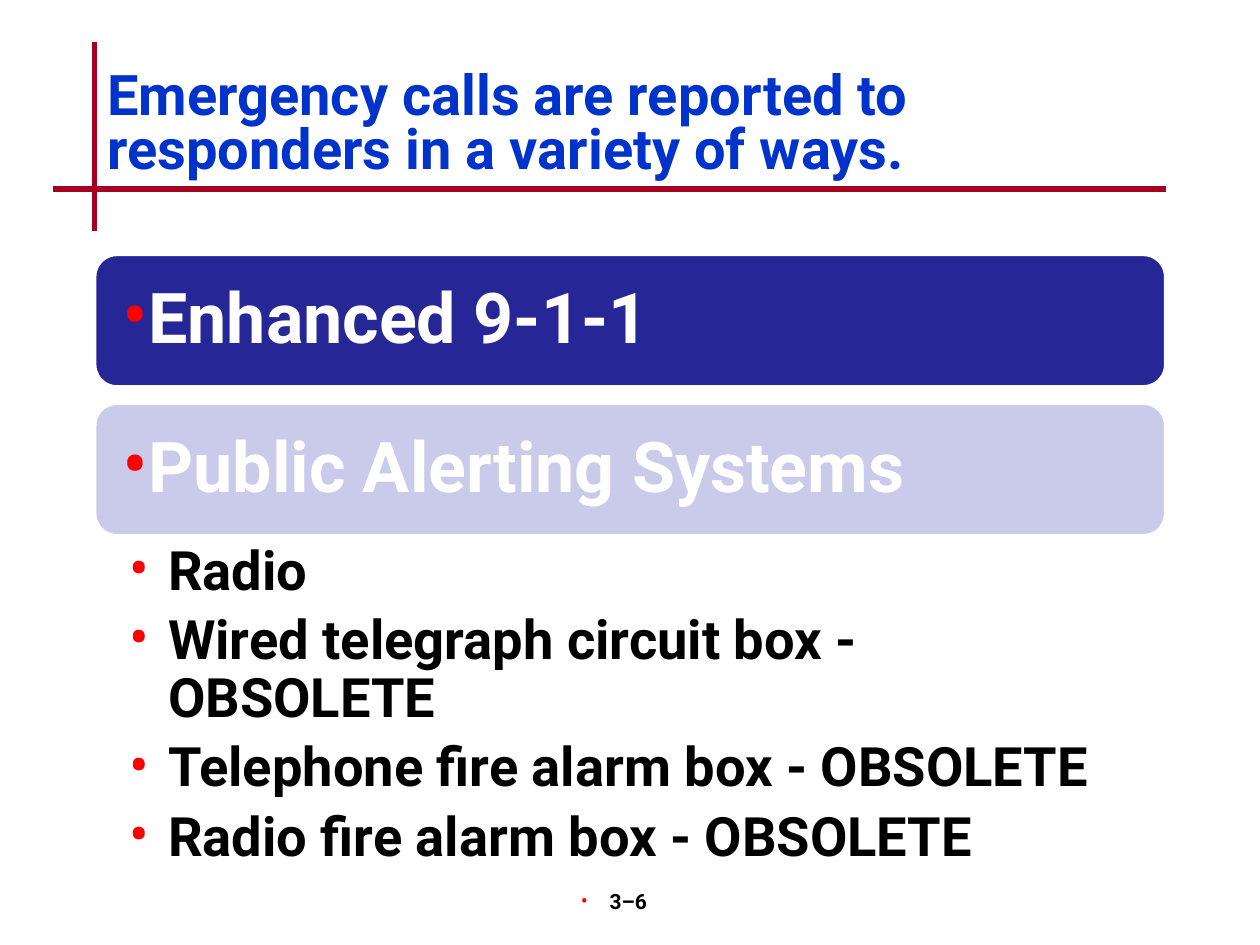
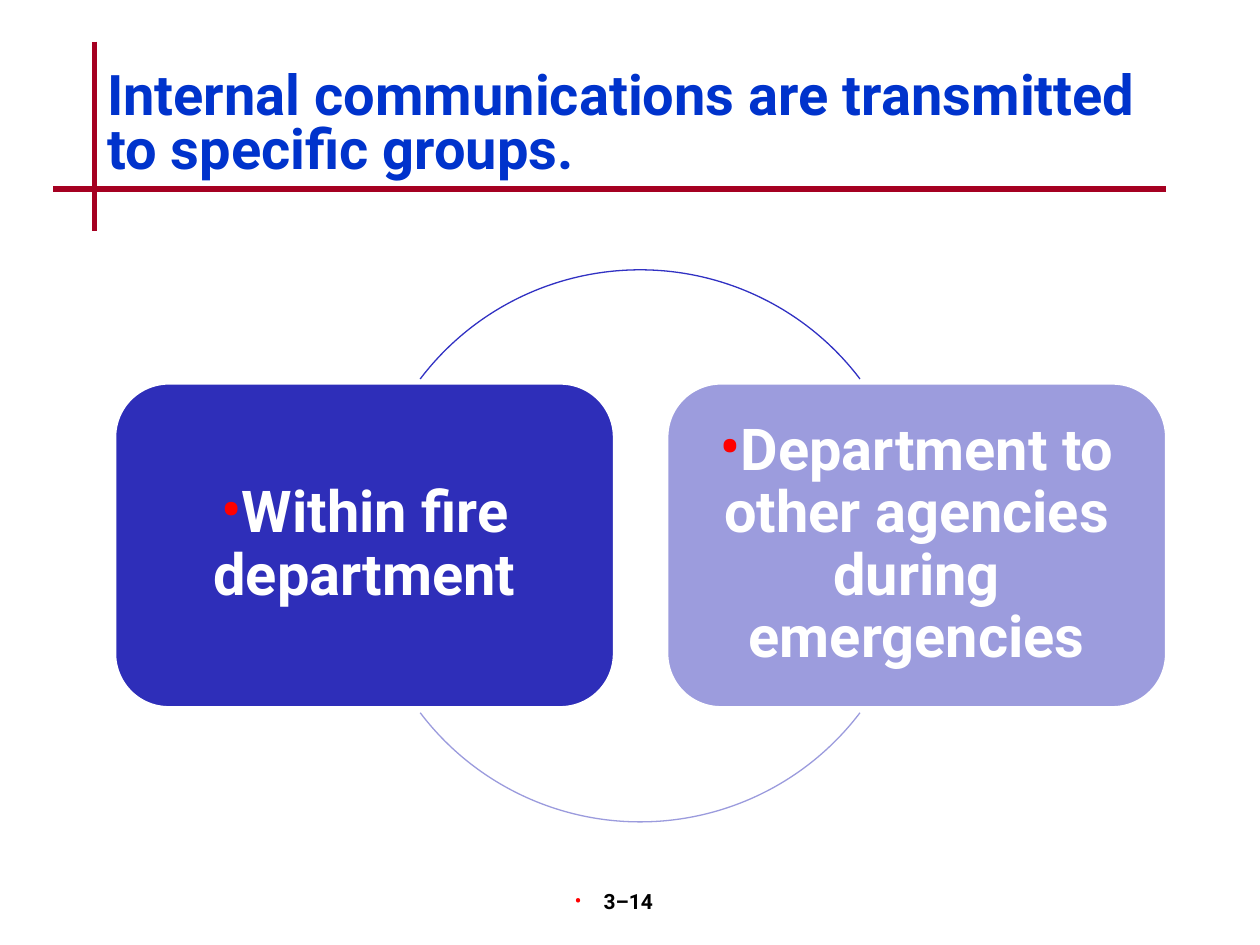
from dataclasses import dataclass
from typing import Any

from lxml.etree import SubElement
from pptx import Presentation
from pptx.dml.color import RGBColor
from pptx.enum.shapes import MSO_CONNECTOR, MSO_SHAPE
from pptx.enum.text import MSO_ANCHOR, MSO_AUTO_SIZE, PP_ALIGN
from pptx.oxml.ns import qn
from pptx.util import Cm, Pt


@dataclass(frozen=True)
class Theme:
    font: str = "Roboto"
    title: str = "0033CC"
    rule: str = "A50021"
    bullet: str = "FF0000"
    white: str = "FFFFFF"
    black: str = "000000"
    title_size: int = 32
    topic_size: int = 40
    method_size: int = 31
    group_size: int = 33
    page_size: int = 12


THEME = Theme()


@dataclass(frozen=True)
class Box:
    """Position and size in centimetres."""
    left: float
    top: float
    width: float
    height: float

    def lengths(self) -> tuple[Cm, Cm, Cm, Cm]:
        return Cm(self.left), Cm(self.top), Cm(self.width), Cm(self.height)


@dataclass(frozen=True)
class TextStyle:
    size: int
    color: str
    align: PP_ALIGN = PP_ALIGN.LEFT
    anchor: MSO_ANCHOR = MSO_ANCHOR.MIDDLE
    insets: tuple[float, float, float, float] = (0.25, 0.13, 0.25, 0.13)
    line_spacing: float = 0.9
    space_after: float = 0
    bullet_percent: int = 0  # 0 means no bullet
    hanging: float = 0


@dataclass(frozen=True)
class Panel:
    text: str
    fill: str


@dataclass(frozen=True)
class Arc:
    start: float
    end: float
    color: str


TITLE_BOX = Box(1.91, 1.27, 21.59, 2.54)
PAGE_BOX = Box(9.96, 17.78, 5.28, 1.27)
RULES = [(1.91, 0.84, 1.91, 4.65), (1.07, 3.81, 23.5, 3.81)]

TITLE = TextStyle(THEME.title_size, THEME.title, line_spacing=0.8)
PAGE = TextStyle(THEME.page_size, THEME.black, PP_ALIGN.CENTER, MSO_ANCHOR.TOP,
                 (0.25, 0.13, 0.7, 0.13), 1.0, bullet_percent=100, hanging=0.58)
TOPIC = TextStyle(THEME.topic_size, THEME.white, insets=(0.43,) * 4,
                  bullet_percent=110)
METHOD = TextStyle(THEME.method_size, THEME.black, anchor=MSO_ANCHOR.TOP,
                   insets=(0.69, 0.15, 0.79, 0.15), space_after=6,
                   bullet_percent=110, hanging=0.79)
GROUP = TextStyle(THEME.group_size, THEME.white, PP_ALIGN.CENTER,
                  insets=(0.36,) * 4, bullet_percent=110)


def apply(target: Any, values: dict[str, Any]) -> None:
    for name, value in values.items():
        setattr(target, name, value)


def rgb(color: str) -> RGBColor:
    return RGBColor.from_string(color)


def add_bullet(paragraph: Any, style: TextStyle) -> None:
    properties = paragraph._p.get_or_add_pPr()
    properties.set("marL", str(Cm(style.hanging)))
    properties.set("indent", str(-Cm(style.hanging)))
    color = SubElement(properties, qn("a:buClr"))
    SubElement(color, qn("a:srgbClr"), val=THEME.bullet)
    SubElement(properties, qn("a:buSzPct"), val=str(style.bullet_percent * 1000))
    SubElement(properties, qn("a:buFont"), typeface=THEME.font)
    SubElement(properties, qn("a:buChar"), char="•")


def write(shape: Any, lines: list[str], style: TextStyle) -> None:
    frame = shape.text_frame
    left, top, right, bottom = map(Cm, style.insets)
    apply(frame, {
        "text": "\n".join(lines), "word_wrap": True,
        "auto_size": MSO_AUTO_SIZE.NONE, "vertical_anchor": style.anchor,
        "margin_left": left, "margin_top": top,
        "margin_right": right, "margin_bottom": bottom,
    })
    for paragraph in frame.paragraphs:
        apply(paragraph, {
            "alignment": style.align, "line_spacing": style.line_spacing,
            "space_before": Pt(0), "space_after": Pt(style.space_after),
        })
        if style.bullet_percent:
            add_bullet(paragraph, style)
        font = paragraph.runs[0].font
        apply(font, {"name": THEME.font, "size": Pt(style.size), "bold": True})
        font.color.rgb = rgb(style.color)


def add_text(slide: Any, box: Box, lines: list[str], style: TextStyle) -> None:
    write(slide.shapes.add_textbox(*box.lengths()), lines, style)


def set_line(shape: Any, color: str, width: float) -> None:
    shape.line.color.rgb = rgb(color)
    shape.line.width = Pt(width)


def add_panel(slide: Any, panel: Panel, box: Box, style: TextStyle) -> None:
    rounded = slide.shapes.add_shape(MSO_SHAPE.ROUNDED_RECTANGLE, *box.lengths())
    rounded.shadow.inherit = False
    rounded.fill.solid()
    rounded.fill.fore_color.rgb = rgb(panel.fill)
    set_line(rounded, THEME.white, 2)
    write(rounded, [panel.text], style)


def add_arc(slide: Any, arc: Arc, box: Box) -> None:
    curve = slide.shapes.add_shape(MSO_SHAPE.ARC, *box.lengths())
    curve.shadow.inherit = False
    # Adjustments count 60000ths of a degree, divided by 100000
    for index, degrees in enumerate((arc.start, arc.end)):
        curve.adjustments[index] = degrees * 0.6
    curve.fill.background()
    set_line(curve, arc.color, 0.75)


def add_slide(deck: Any, title: str, page: str) -> Any:
    """Start a slide with the crossed rules, title and page number."""
    slide = deck.slides.add_slide(deck.slide_layouts[5])
    for ends in RULES:
        rule = slide.shapes.add_connector(MSO_CONNECTOR.STRAIGHT, *map(Cm, ends))
        set_line(rule, THEME.rule, 3)
        SubElement(rule._element.spPr, qn("a:effectLst"))
    heading = slide.shapes.title
    apply(heading, dict(zip(("left", "top", "width", "height"), TITLE_BOX.lengths())))
    write(heading, [title], TITLE)
    add_text(slide, PAGE_BOX, [page], PAGE)
    return slide


def build_call_reporting(deck: Any) -> None:
    slide = add_slide(
        deck, "Emergency calls are reported to responders in a variety of ways.", "3–6")
    # Stacked topics
    topics = [Panel("Enhanced 9-1-1", "262697"),
              Panel("Public Alerting Systems", "CACAEA")]
    for row, topic in enumerate(topics):
        add_panel(slide, topic, Box(1.91, 5.13 + row * 3, 21.59, 2.67), TOPIC)
    # Alerting methods
    methods = ["Radio", "Wired telegraph circuit box - OBSOLETE",
               "Telephone fire alarm box - OBSOLETE", "Radio fire alarm box - OBSOLETE"]
    add_text(slide, Box(1.91, 10.8, 21.59, 5.87), methods, METHOD)


def build_internal_communications(deck: Any) -> None:
    slide = add_slide(
        deck, "Internal communications are transmitted to specific groups.", "3–14")
    # Cycle arcs, on a circle as wide as the step between groups
    step = 11.13
    for arc in (Arc(217.2, 322.8, "3131C3"), Arc(37.2, 142.8, "9B9BDD")):
        add_arc(slide, arc, Box(7.34, 5.44, step, step))
    # Groups
    groups = [Panel("Within fire department", "2E2EB9"),
              Panel("Department to other agencies during emergencies", "9C9CDD")]
    for column, group in enumerate(groups):
        add_panel(slide, group, Box(2.31 + column * step, 7.72, 10.08, 6.55), GROUP)


def main() -> None:
    deck = Presentation()
    apply(deck, {"slide_width": Cm(25.4), "slide_height": Cm(19.05)})
    build_call_reporting(deck)
    build_internal_communications(deck)
    deck.save("out.pptx")


if __name__ == "__main__":
    main()
